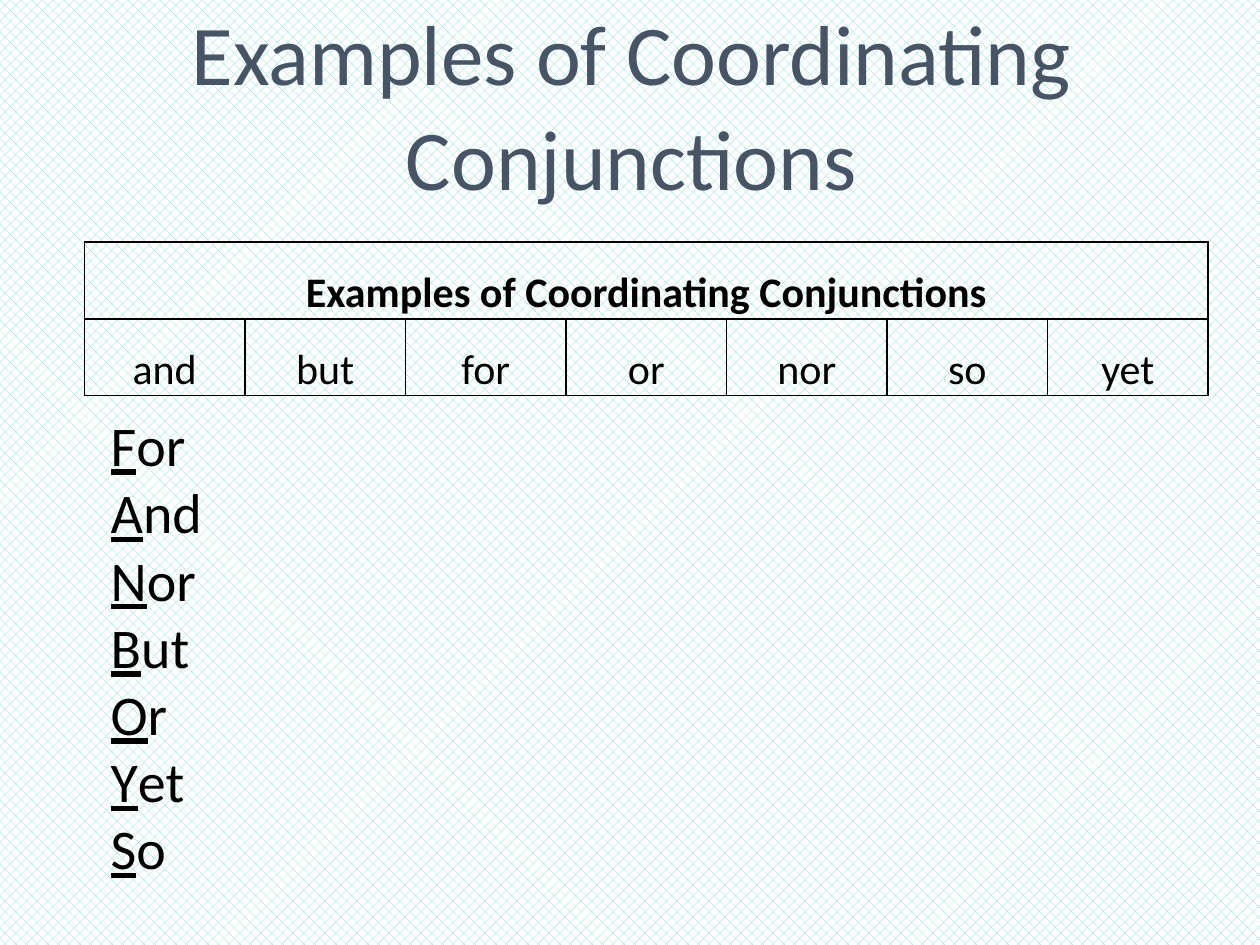
from typing import NamedTuple

from lxml.etree import SubElement
from pptx import Presentation
from pptx.dml.color import RGBColor
from pptx.enum.dml import MSO_PATTERN
from pptx.enum.text import MSO_ANCHOR, MSO_AUTO_SIZE, PP_ALIGN
from pptx.oxml.ns import qn
from pptx.slide import Slide
from pptx.table import _Cell as Cell
from pptx.text.text import Font
from pptx.util import Inches, Pt

FONT = "Calibri"
BLACK = RGBColor(0x00, 0x00, 0x00)
WHITE = RGBColor(0xFF, 0xFF, 0xFF)
SLATE = RGBColor(0x46, 0x54, 0x66)
TEAL = RGBColor(0x7C, 0xD7, 0xCF)

HEADING = "Examples of Coordinating Conjunctions"
CONJUNCTIONS = ["and", "but", "for", "or", "nor", "so", "yet"]
FANBOYS = ["For", "And", "Nor", "But", "Or", "Yet", "So"]


class Box(NamedTuple):
    left: float
    top: float
    width: float
    height: float

    def lengths(self) -> list[Inches]:
        return [Inches(value) for value in self]


TITLE_BOX = Box(0.87, 0.04, 8.28, 1.54)
TABLE_BOX = Box(0.67, 1.92, 8.92, 1.22)
LIST_BOX = Box(0.78, 3.21, 1.06, 3.87)


def style_font(font: Font, size: float, color: RGBColor = BLACK) -> None:
    font.name = FONT
    font.size = Pt(size)
    font.color.rgb = color


def paint_background(slide: Slide) -> None:
    fill = slide.background.fill
    fill.patterned()
    fill.pattern = MSO_PATTERN.from_xml("pct40")
    fill.fore_color.rgb = TEAL
    fill.back_color.rgb = WHITE


def add_title(slide: Slide) -> None:
    title = slide.shapes.title
    title.left, title.top, title.width, title.height = TITLE_BOX.lengths()
    tf = title.text_frame
    tf.text = HEADING
    tf.auto_size = MSO_AUTO_SIZE.NONE
    tf.vertical_anchor = MSO_ANCHOR.MIDDLE
    p = tf.paragraphs[0]
    p.alignment = PP_ALIGN.CENTER
    p.line_spacing = Pt(60)
    style_font(p.runs[0].font, 48.6, SLATE)


def outline_cell(cell: Cell) -> None:
    """Draw a 1 pt black line on each side and leave the cell unfilled."""
    tc_pr = cell._tc.get_or_add_tcPr()
    for side in ("a:lnL", "a:lnR", "a:lnT", "a:lnB"):
        line = SubElement(tc_pr, qn(side), w=str(Pt(1)))
        solid = SubElement(line, qn("a:solidFill"))
        SubElement(solid, qn("a:srgbClr"), val=str(BLACK))
    cell.fill.background()


def write_cell(cell: Cell, text: str, bold: bool = False) -> None:
    cell.text = text
    p = cell.text_frame.paragraphs[0]
    p.alignment = PP_ALIGN.CENTER
    p.line_spacing = 1.5
    style_font(p.runs[0].font, 24)
    p.runs[0].font.bold = bold


def add_conjunction_table(slide: Slide) -> None:
    columns = len(CONJUNCTIONS)
    table = slide.shapes.add_table(2, columns, *TABLE_BOX.lengths()).table
    table.first_row = table.horz_banding = False
    for cell in table.iter_cells():
        outline_cell(cell)
        cell.vertical_anchor = MSO_ANCHOR.MIDDLE
        cell.margin_left = cell.margin_right = Inches(0.07)
        cell.margin_top = cell.margin_bottom = 0
    table.cell(0, 0).merge(table.cell(0, columns - 1))
    write_cell(table.cell(0, 0), HEADING, bold=True)
    for column, word in enumerate(CONJUNCTIONS):
        write_cell(table.cell(1, column), word)


def add_fanboys_list(slide: Slide) -> None:
    """List the words with their initials underlined."""
    tf = slide.shapes.add_textbox(*LIST_BOX.lengths()).text_frame
    tf.word_wrap = True
    tf.auto_size = MSO_AUTO_SIZE.SHAPE_TO_FIT_TEXT
    for index, word in enumerate(FANBOYS):
        p = tf.add_paragraph() if index else tf.paragraphs[0]
        for part, underlined in ((word[0], True), (word[1:], False)):
            r = p.add_run()
            r.text = part
            style_font(r.font, 32)
            r.font.underline = underlined


def main() -> None:
    prs = Presentation()
    prs.slide_width, prs.slide_height = Inches(10), Inches(7.5)
    title_only = prs.slide_layouts[5]
    slide = prs.slides.add_slide(title_only)
    paint_background(slide)
    add_title(slide)
    add_conjunction_table(slide)
    add_fanboys_list(slide)
    prs.save("out.pptx")


if __name__ == "__main__":
    main()
